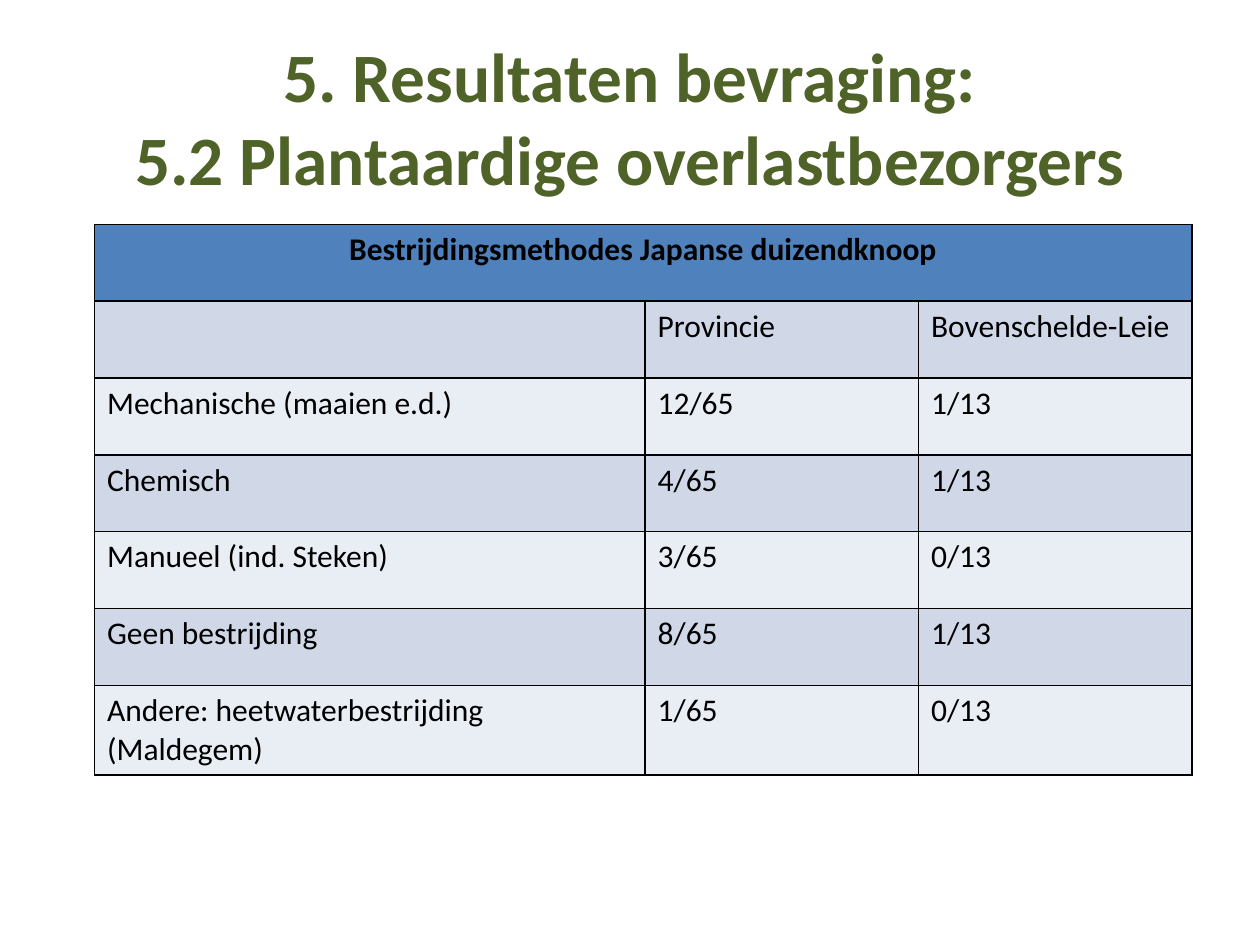
from typing import NamedTuple

from lxml import etree
from pptx import Presentation
from pptx.dml.color import RGBColor
from pptx.enum.text import MSO_ANCHOR, MSO_AUTO_SIZE, PP_ALIGN
from pptx.oxml.ns import qn
from pptx.util import Inches, Pt

CENTER, LEFT = PP_ALIGN.CENTER, PP_ALIGN.LEFT
MIDDLE = MSO_ANCHOR.MIDDLE
NO_AUTOFIT = MSO_AUTO_SIZE.NONE

GREEN = RGBColor(0x4F, 0x62, 0x28)
BLUE = RGBColor(0x4F, 0x81, 0xBD)
BAND_DARK = RGBColor(0xD0, 0xD8, 0xE8)
BAND_LIGHT = RGBColor(0xE9, 0xED, 0xF4)
BLACK = RGBColor(0, 0, 0)

FONT = "Calibri"
TITLE = "5. Resultaten bevraging:\v5.2 Plantaardige overlastbezorgers"
TABLE_TITLE = "Bestrijdingsmethodes Japanse duizendknoop"
COLUMN_WIDTHS = (4.37, 2.17, 2.17)
ROW_HEIGHT = 0.61


class Method(NamedTuple):
    name: str
    province: str
    basin: str


ROWS = (
    Method("", "Provincie", "Bovenschelde-Leie"),
    Method("Mechanische (maaien e.d.)", "12/65", "1/13"),
    Method("Chemisch", "4/65", "1/13"),
    Method("Manueel (ind. Steken)", "3/65", "0/13"),
    Method("Geen bestrijding", "8/65", "1/13"),
    Method("Andere: heetwaterbestrijding (Maldegem)", "1/65", "0/13"),
)


def set_font(p, size: float, color: RGBColor, bold: bool) -> None:
    font = p.font
    font.name, font.size, font.bold = FONT, Pt(size), bold
    font.color.rgb = color


def add_borders(cell) -> None:
    tc_pr = cell._tc.get_or_add_tcPr()
    for side in ("a:lnL", "a:lnR", "a:lnT", "a:lnB"):
        line = etree.SubElement(tc_pr, qn(side), w=str(Pt(1)))
        fill = etree.SubElement(line, qn("a:solidFill"))
        etree.SubElement(fill, qn("a:srgbClr"), val=str(BLACK))


def style_cell(cell, text: str, fill: RGBColor, header: bool = False) -> None:
    add_borders(cell)
    cell.fill.solid()
    cell.fill.fore_color.rgb = fill
    cell.text = text
    p = cell.text_frame.paragraphs[0]
    p.alignment = CENTER if header else LEFT
    set_font(p, 18, BLACK, header)


def add_title(s) -> None:
    title = s.shapes.title
    title.left, title.top = Inches(0.5), Inches(0.3)
    title.width, title.height = Inches(9), Inches(1.25)
    tf = title.text_frame
    tf.text = TITLE
    tf.auto_size = NO_AUTOFIT
    tf.vertical_anchor = MIDDLE
    p = tf.paragraphs[0]
    p.alignment = CENTER
    set_font(p, 39.6, GREEN, True)


def add_methods_table(s) -> None:
    row_count = len(ROWS) + 1
    table = s.shapes.add_table(
        row_count, len(COLUMN_WIDTHS), Inches(0.75), Inches(1.78),
        Inches(sum(COLUMN_WIDTHS)), Inches(ROW_HEIGHT * row_count),
    ).table
    for column, width in zip(table.columns, COLUMN_WIDTHS):
        column.width = Inches(width)

    table.cell(0, 0).merge(table.cell(0, len(COLUMN_WIDTHS) - 1))
    for col in range(len(COLUMN_WIDTHS)):
        style_cell(table.cell(0, col), "" if col else TABLE_TITLE, BLUE, True)
    for row, method in enumerate(ROWS, start=1):
        fill = BAND_DARK if row % 2 else BAND_LIGHT
        for col, text in enumerate(method):
            style_cell(table.cell(row, col), text, fill)


def main() -> None:
    prs = Presentation()
    prs.slide_width, prs.slide_height = Inches(10), Inches(7.5)
    s = prs.slides.add_slide(prs.slide_layouts.get_by_name("Title Only"))
    add_title(s)
    add_methods_table(s)
    prs.save("out.pptx")


if __name__ == "__main__":
    main()
